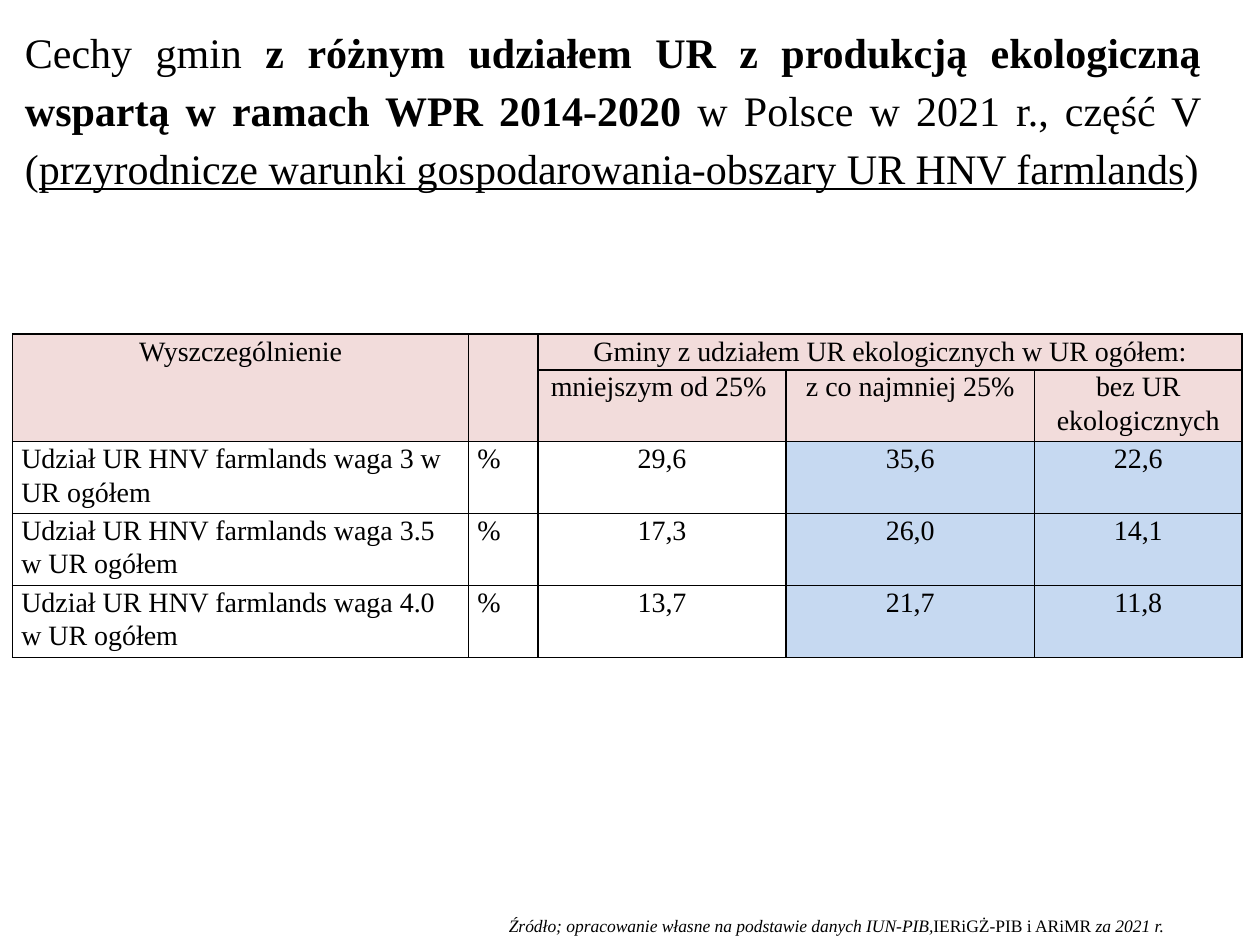
from dataclasses import dataclass

from lxml import etree
from pptx import Presentation, util as u
from pptx.dml.color import RGBColor
from pptx.enum import text
from pptx.oxml.ns import qn


@dataclass(frozen=True)
class Theme:
    font: str = "Times New Roman"
    ink: str = "000000"
    header: str = "F2DCDB"
    accent: str = "C6D9F1"
    title: int = 24
    body: int = 16
    note: int = 10
    border: int = 1


T = Theme()
CENTER, LEFT, JUSTIFY = (text.PP_ALIGN.CENTER, text.PP_ALIGN.LEFT,
                         text.PP_ALIGN.JUSTIFY)

# Content: runs are (text, style letters)
TITLE = [
    ("Cechy gmin ", ""),
    ("z różnym udziałem UR z produkcją ekologiczną wspartą w ramach WPR 2014-2020", "b"),
    (" w Polsce w 2021 r., część V (", ""),
    ("przyrodnicze warunki gospodarowania-obszary UR HNV farmlands", "u"),
    (")", ""),
]
SOURCE = [
    ("Źródło; opracowanie własne na podstawie danych IUN-PIB,", "i"),
    ("IERiGŻ-PIB i ARiMR", ""),
    (" za 2021 r.", "i"),
]
ROWS = [
    ["Wyszczególnienie", "", "Gminy z udziałem UR ekologicznych w UR ogółem:", "", ""],
    ["", "", "mniejszym od 25% ", "z co najmniej 25%", "bez UR ekologicznych"],
    ["Udział UR HNV farmlands waga 3 w UR ogółem", "%", "29,6", "35,6", "22,6"],
    ["Udział UR HNV farmlands waga 3.5 w UR ogółem", "%", "17,3", "26,0", "14,1"],
    ["Udział UR HNV farmlands waga 4.0 w UR ogółem", "%", "13,7", "21,7", "11,8"],
]
HEADER_ROWS = 2
MERGES = [((0, 0), (1, 0)), ((0, 1), (1, 1)), ((0, 2), (0, 4))]
COL_WIDTHS = [3.62, 0.55, 1.97, 1.97, 1.65]
ROW_HEIGHTS = [0.28] + [0.57] * 4


def write(tf, runs, size, align=LEFT, spacing=None, after=None):
    """Fill the first paragraph of a text frame with styled runs."""
    tf.word_wrap = True
    p = tf.paragraphs[0]
    p.alignment, p.line_spacing = align, spacing
    if after is not None:
        p.space_after = u.Pt(after)
    for content, style in runs:
        r = p.add_run()
        r.text = content
        f = r.font
        f.name, f.size = T.font, u.Pt(size)
        f.color.rgb = RGBColor.from_string(T.ink)
        f.bold, f.italic, f.underline = (k in style for k in "biu")


def add_text(s, box, runs, size, **fmt):
    sp = s.shapes.add_textbox(*map(u.Inches, box))
    write(sp.text_frame, runs, size, **fmt)


def set_borders(cell):
    tcPr = cell._tc.get_or_add_tcPr()
    for i, side in enumerate("LRTB"):
        ln = etree.Element(qn(f"a:ln{side}"), w=str(u.Pt(T.border)))
        fill = etree.SubElement(ln, qn("a:solidFill"))
        etree.SubElement(fill, qn("a:srgbClr"), val=T.ink)
        tcPr.insert(i, ln)


def fill_cell(cell, row, col, content):
    is_header = row < HEADER_ROWS
    color = T.header if is_header else T.accent if col >= 3 else None
    if color:
        cell.fill.solid()
        cell.fill.fore_color.rgb = RGBColor.from_string(color)
    else:
        cell.fill.background()
    cell.margin_left = cell.margin_right = u.Inches(0.07)
    cell.margin_top = cell.margin_bottom = 0
    set_borders(cell)
    if content:
        align = CENTER if is_header or col >= 2 else LEFT
        write(cell.text_frame, [(content, "")], T.body, align=align,
              spacing=1.07, after=8)


def add_grid(s):
    frame = s.shapes.add_table(
        len(ROWS), len(COL_WIDTHS), u.Inches(0.1), u.Inches(2.65),
        u.Inches(sum(COL_WIDTHS)), u.Inches(sum(ROW_HEIGHTS)))
    tbl = frame.table
    tbl.first_row = tbl.horz_banding = False
    for column, width in zip(tbl.columns, COL_WIDTHS):
        column.width = u.Inches(width)
    for row, height in zip(tbl.rows, ROW_HEIGHTS):
        row.height = u.Inches(height)
    for start, end in MERGES:
        tbl.cell(*start).merge(tbl.cell(*end))
    for i, row in enumerate(ROWS):
        for j, content in enumerate(row):
            fill_cell(tbl.cell(i, j), i, j, content)


def main():
    prs = Presentation()
    prs.slide_width, prs.slide_height = u.Inches(10), u.Inches(7.5)
    s = prs.slides.add_slide(prs.slide_layouts[6])

    # Source note, data table, title
    add_text(s, (3.94, 7.21, 6.06, 0.27), SOURCE, T.note)
    add_grid(s)
    add_text(s, (0.1, 0.1, 9.53, 1.46), TITLE, T.title,
             align=JUSTIFY, spacing=1.15, after=12)

    prs.save("out.pptx")


if __name__ == "__main__":
    main()
